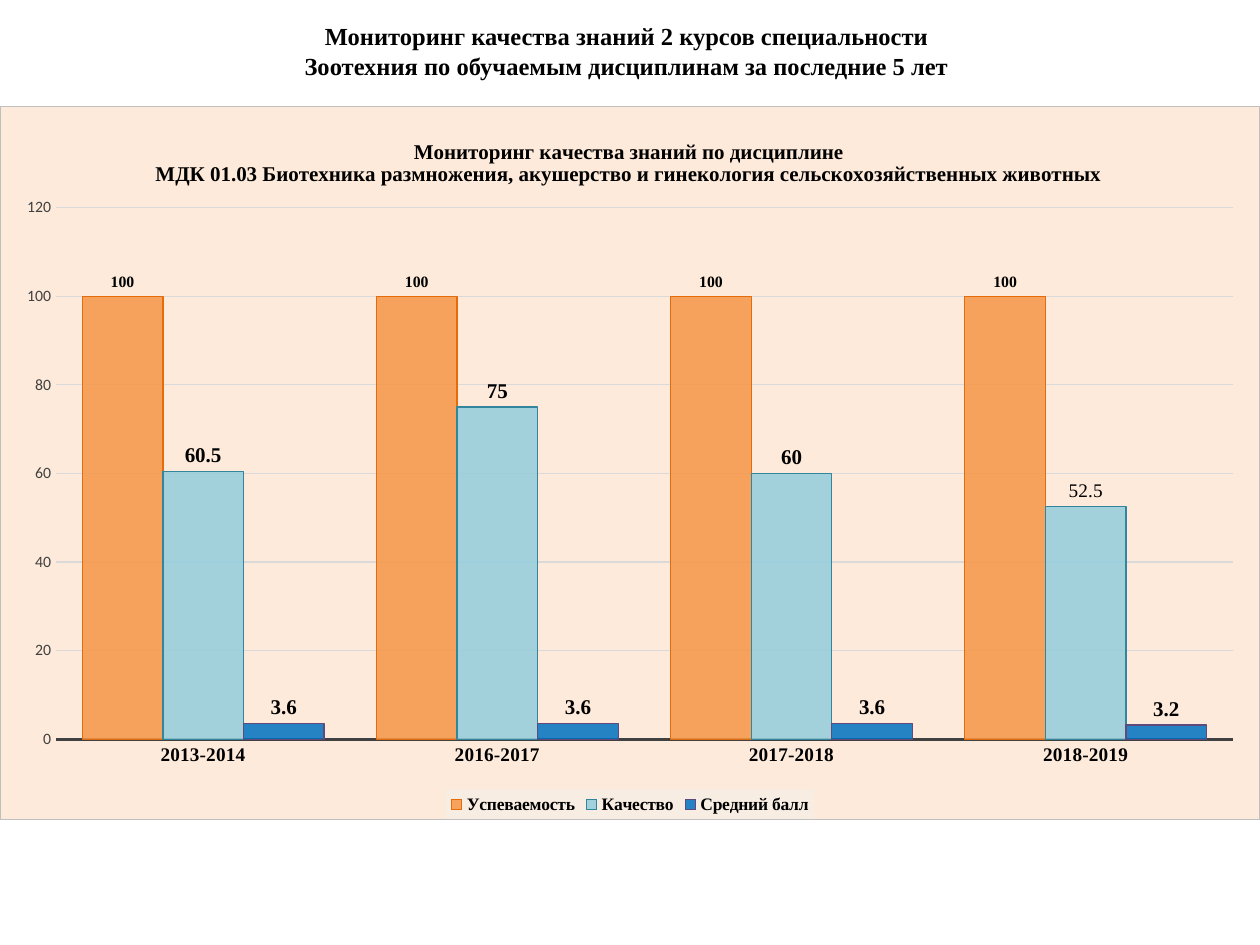
import pptx
import pptx.util
import pptx.chart.data
import pptx.dml.color
import pptx.enum.chart
import pptx.enum.text
import pptx.oxml
import pptx.oxml.ns
from lxml import etree

Pt = pptx.util.Pt
qn = pptx.oxml.ns.qn
SERIF, SANS = "Times New Roman", "Calibri"

# Content
HEAD = ("Мониторинг качества знаний 2 курсов специальности "
        "Зоотехния по обучаемым дисциплинам за последние 5 лет")
TITLE = ["Мониторинг качества знаний по дисциплине",
         "МДК 01.03 Биотехника размножения, акушерство и гинекология "
         "сельскохозяйственных животных"]
YEARS = ["2013-2014", "2016-2017", "2017-2018", "2018-2019"]
# name, values, fill, line, label size
SERIES = [
    ("Успеваемость", (100, 100, 100, 100), "F79646", "E46C0A", 9),
    ("Качество", (60.5, 75, 60, 52.5), "93CDDD", "31859C", 12),
    ("Средний балл", (3.6, 3.6, 3.6, 3.2), "0070C0", "604A7B", 12),
]


def rgb(code):
    return pptx.dml.color.RGBColor.from_string(code)


def style(font, size, bold=True, face=SERIF, color="000000"):
    font.size, font.bold, font.name = Pt(size), bold, face
    font.color.rgb = rgb(color)


def stroke(line, color, width=0.75):
    line.color.rgb = rgb(color)
    line.width = Pt(width)


def paint(fill, color, alpha):
    fill.solid()
    fill.fore_color.rgb = rgb(color)
    node = fill._xPr.find(".//" + qn("a:srgbClr"))
    etree.SubElement(node, qn("a:alpha")).set("val", str(alpha * 1000))


def layout(**parts):
    """Manual chart layout, as fractions of the chart area."""
    box = etree.Element(qn("c:layout"))
    man = etree.SubElement(box, qn("c:manualLayout"))
    if "w" in parts:
        etree.SubElement(man, qn("c:layoutTarget")).set("val", "inner")
    for key in ("x", "y"):
        etree.SubElement(man, qn(f"c:{key}Mode")).set("val", "edge")
    for key, val in parts.items():
        etree.SubElement(man, qn("c:" + key)).set("val", str(val))
    return box


def area(color, edge, alpha=100):
    """Shape properties for a chart part that has no public format."""
    ns = pptx.oxml.ns.nsdecls("c", "a")
    return pptx.oxml.parse_xml(
        f'<c:spPr {ns}><a:solidFill><a:srgbClr val="{color}">'
        f'<a:alpha val="{alpha * 1000}"/></a:srgbClr></a:solidFill>{edge}</c:spPr>')


# Slide and heading
prs = pptx.Presentation()
prs.slide_width, prs.slide_height = Pt(720), Pt(540)
slide = prs.slides.add_slide(prs.slide_layouts[5])
head = slide.shapes.title
head.left, head.top, head.width, head.height = Pt(163.4), Pt(8.6), Pt(389.5), Pt(41)
frame = head.text_frame
frame.text = HEAD
frame.word_wrap = True
frame.vertical_anchor = pptx.enum.text.MSO_ANCHOR.MIDDLE
para = frame.paragraphs[0]
para.alignment = pptx.enum.text.PP_ALIGN.CENTER
style(para.runs[0].font, 14)

# Chart
data = pptx.chart.data.CategoryChartData()
data.categories = YEARS
for name, vals, *_ in SERIES:
    data.add_series(name, vals)
chart = slide.shapes.add_chart(
    pptx.enum.chart.XL_CHART_TYPE.COLUMN_CLUSTERED,
    Pt(0), Pt(60.5), Pt(720), Pt(408), data).chart
style(chart.font, 10, False, SANS)
root = chart._chartSpace
edge = '<a:ln w="9525"><a:solidFill><a:srgbClr val="BFBFBF"/></a:solidFill></a:ln>'
root.find(qn("c:chart")).addnext(area("FDEADA", edge))

# Chart title
chart.has_title = True
text = chart.chart_title.text_frame
text.text = "\n".join(TITLE)
for para in text.paragraphs:
    para.alignment = pptx.enum.text.PP_ALIGN.CENTER
    style(para.runs[0].font, 12)
chart.chart_title.include_in_layout = False
node = root.find(".//" + qn("c:title"))
for old in node.findall(qn("c:layout")):
    node.remove(old)
node.find(qn("c:tx")).addnext(layout(x=0.12, y=0.04))

# Plot and series
plot = chart.plots[0]
plot.gap_width, plot.overlap = 65, 0
plot.vary_by_categories = False
spot = root.find(".//" + qn("c:plotArea"))
for old in spot.findall(qn("c:layout")):
    spot.remove(old)
spot.insert(0, layout(x=0.044, y=0.142, w=0.935, h=0.746))
for ser, (_, _, fill, line, size) in zip(plot.series, SERIES):
    paint(ser.format.fill, fill, 85)
    stroke(ser.format.line, line)
    tags = ser.data_labels
    tags.show_value = True
    tags.position = pptx.enum.chart.XL_LABEL_POSITION.OUTSIDE_END
    style(tags.font, size)
last = plot.series[1].points[3].data_label
style(last.font, 11, False)
last.position = pptx.enum.chart.XL_LABEL_POSITION.OUTSIDE_END

# Axes
cat, val = chart.category_axis, chart.value_axis
for axis in (cat, val):
    axis.major_tick_mark = axis.minor_tick_mark = pptx.enum.chart.XL_TICK_MARK.NONE
style(cat.tick_labels.font, 11)
stroke(cat.format.line, "404040", 1.5)
style(val.tick_labels.font, 9, False, SANS, "404040")
val.format.line.fill.background()
val.minimum_scale, val.maximum_scale, val.major_unit = 0, 120, 20
val.has_major_gridlines = True
stroke(val.major_gridlines.format.line, "D9D9D9")

# Legend
chart.has_legend = True
key = chart.legend
key.position = pptx.enum.chart.XL_LEGEND_POSITION.BOTTOM
key.include_in_layout = False
style(key.font, 10)
root.find(".//" + qn("c:legend")).find(qn("c:txPr")).addprevious(
    area("F2F2F2", "<a:ln><a:noFill/></a:ln>", 39))

prs.save("out.pptx")
